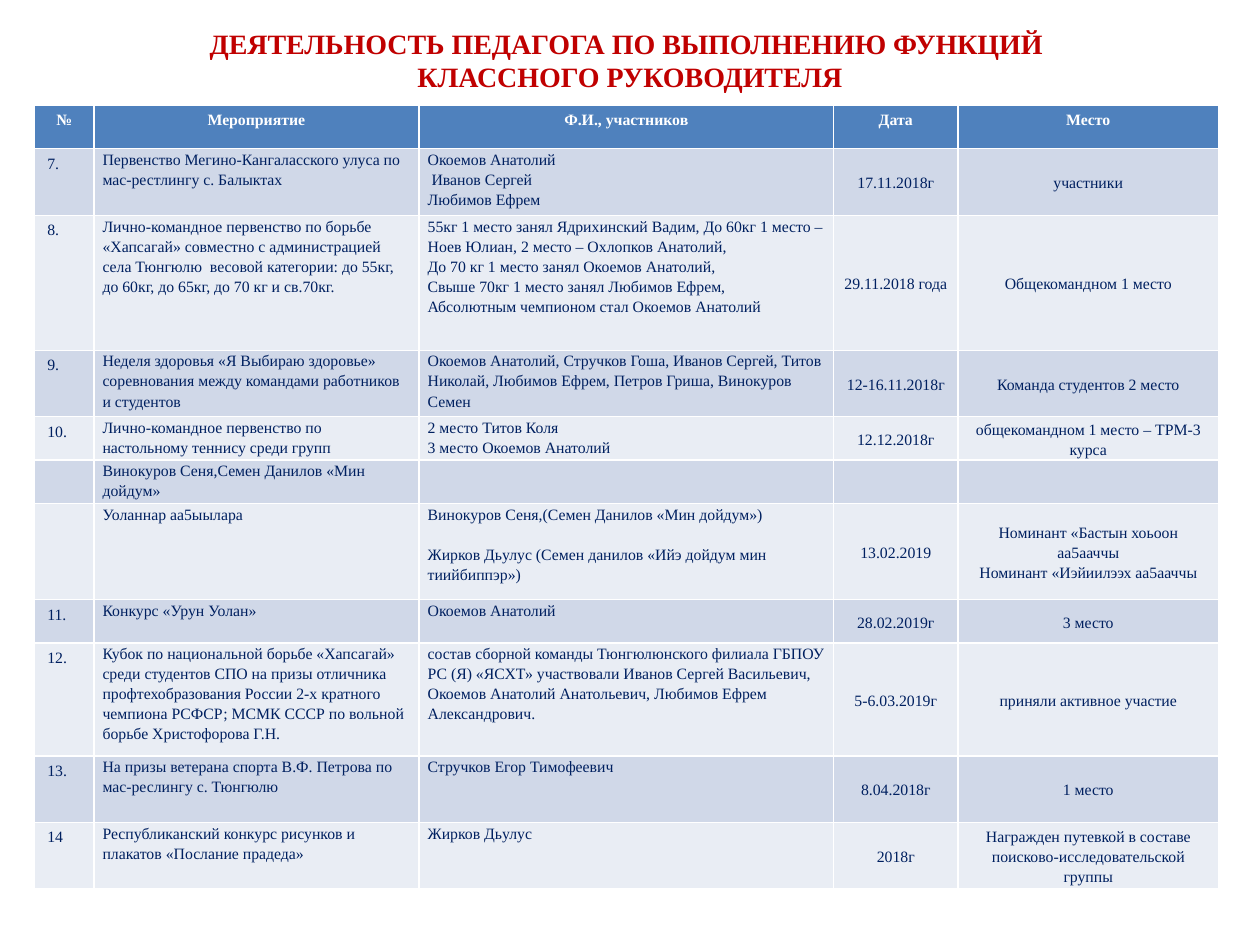
from dataclasses import dataclass

from pptx import Presentation
from pptx.dml.color import RGBColor
from pptx.enum.text import MSO_ANCHOR, PP_ALIGN
from pptx.util import Pt

COLORS = {
    "title": "C00000",
    "header": "4F81BD",
    "header_text": "FFFFFF",
    "odd_row": "D0D8E8",
    "even_row": "E9EDF4",
    "text": "002060",
}
TITLE_FONT = {"name": "Times New Roman", "size": Pt(16), "bold": True}
HEADER_FONT = {"name": "Times New Roman", "size": Pt(9), "bold": True}
BODY_FONT = {"name": "Times New Roman", "size": Pt(9), "bold": False}
TIGHT_MARGINS = {
    "margin_left": Pt(5), "margin_top": Pt(0),
    "margin_right": Pt(5), "margin_bottom": Pt(0),
}


@dataclass
class Line:
    text: str
    before: float = 0
    indent: float = 0


@dataclass
class Column:
    heading: str
    width: float
    align: PP_ALIGN = PP_ALIGN.LEFT
    anchor: MSO_ANCHOR = MSO_ANCHOR.TOP
    tight: bool = True


@dataclass
class Event:
    height: float
    number: str
    activity: str
    participants: list[Line]
    date: str
    places: list[Line]

    def cells(self) -> list[list[Line]]:
        return [[Line(self.number)], [Line(self.activity)], self.participants,
                [Line(self.date)], self.places]


CENTERED = {"align": PP_ALIGN.CENTER, "anchor": MSO_ANCHOR.MIDDLE}
COLUMNS = [
    Column("№", 33.8, tight=False),
    Column("Мероприятие", 185.8),
    Column("Ф.И., участников", 236.9),
    Column("Дата", 71.2, **CENTERED),
    Column("Место", 148.8, **CENTERED),
]
HEADER_HEIGHT = 24.8

EVENTS = [
    Event(38.2, "7.", "Первенство Мегино-Кангаласского улуса по мас-рестлингу с. Балыктах",
          [Line("Окоемов Анатолий"), Line("Иванов Сергей", indent=2.25), Line("Любимов Ефрем")],
          "17.11.2018г", [Line("участники")]),
    Event(77, "8.", "Лично-командное первенство по борьбе «Хапсагай» совместно с администрацией "
          "села Тюнгюлю  весовой категории: до 55кг, до 60кг, до 65кг, до 70 кг и св.70кг.",
          [Line("55кг 1 место занял Ядрихинский Вадим, До 60кг 1 место – "
                "Ноев Юлиан, 2 место – Охлопков Анатолий,"),
           Line("До 70 кг 1 место занял Окоемов Анатолий,"),
           Line("Свыше 70кг 1 место занял Любимов Ефрем,"),
           Line("Абсолютным чемпионом стал Окоемов Анатолий")],
          "29.11.2018 года", [Line("Общекомандном 1 место")]),
    Event(38, "9.", "Неделя здоровья «Я Выбираю здоровье» соревнования между командами "
          "работников и студентов",
          [Line("Окоемов Анатолий, Стручков Гоша, Иванов Сергей, Титов Николай, "
                "Любимов Ефрем, Петров Гриша, Винокуров Семен")],
          "12-16.11.2018г", [Line("Команда студентов 2 место")]),
    Event(24.8, "10.", "Лично-командное первенство по настольному теннису среди групп",
          [Line("2 место Титов Коля"), Line("3 место Окоемов Анатолий")],
          "12.12.2018г", [Line("общекомандном 1 место – ТРМ-3 курса")]),
    Event(24.8, "", "Винокуров Сеня,Семен Данилов «Мин дойдум»", [Line("")], "", [Line("")]),
    Event(55, "", "Уоланнар аа5ыылара",
          [Line("Винокуров Сеня,(Семен Данилов «Мин дойдум»)"),
           Line("Жирков Дьулус (Семен данилов «Ийэ дойдум мин тиийбиппэр»)", before=11.5)],
          "13.02.2019",
          [Line("Номинант «Бастын хоьоон аа5ааччы"), Line("Номинант «Иэйиилээх аа5ааччы")]),
    Event(24.8, "11.", "Конкурс «Урун Уолан»", [Line("Окоемов Анатолий")],
          "28.02.2019г", [Line("3 место")]),
    Event(64.5, "12.", "Кубок по национальной борьбе «Хапсагай» среди студентов СПО на призы "
          "отличника профтехобразования России 2-х кратного чемпиона РСФСР; "
          "МСМК СССР по вольной борьбе Христофорова Г.Н.",
          [Line("состав сборной команды Тюнгюлюнского филиала ГБПОУ РС (Я) «ЯСХТ» "
                "участвовали Иванов Сергей Васильевич, Окоемов Анатолий Анатольевич, "
                "Любимов Ефрем Александрович.")],
          "5-6.03.2019г", [Line("приняли активное участие")]),
    Event(38, "13.", "На призы ветерана спорта В.Ф. Петрова по мас-реслингу с. Тюнгюлю",
          [Line("Стручков Егор Тимофеевич")], "8.04.2018г", [Line("1 место")]),
    Event(38, "14", "Республиканский конкурс рисунков и плакатов «Послание прадеда»",
          [Line("Жирков Дьулус")], "2018г",
          [Line("Награжден путевкой в составе поисково-исследовательской группы")]),
]


def apply(target, formats: dict) -> None:
    for attribute, value in formats.items():
        setattr(target, attribute, value)


def style_font(font, formats: dict, color: str) -> None:
    apply(font, formats)
    font.color.rgb = RGBColor.from_string(COLORS[color])


def fill_cell(cell, lines: list[Line], fill: str, formats: dict, color: str,
              align: PP_ALIGN, spacing: float) -> None:
    cell.fill.solid()
    cell.fill.fore_color.rgb = RGBColor.from_string(COLORS[fill])
    for index, line in enumerate(lines):
        frame = cell.text_frame
        paragraph = frame.add_paragraph() if index else frame.paragraphs[0]
        apply(paragraph, {"alignment": align, "line_spacing": spacing})
        if line.before:
            paragraph.space_before = Pt(line.before)
        if line.indent:
            paragraph._p.get_or_add_pPr().set("marL", str(Pt(line.indent)))
        if line.text:
            run = paragraph.add_run()
            run.text = line.text
            style_font(run.font, formats, color)
        else:
            # Keeps empty cells from stretching their row
            paragraph._p.get_or_add_endParaRPr().set("sz", "900")


def draw_title(slide) -> None:
    title = slide.shapes.title
    apply(title, {"left": Pt(36), "top": Pt(-2), "width": Pt(648), "height": Pt(72.5)})
    title.text_frame.vertical_anchor = MSO_ANCHOR.MIDDLE
    title.text_frame.text = ("ДЕЯТЕЛЬНОСТЬ ПЕДАГОГА ПО ВЫПОЛНЕНИЮ ФУНКЦИЙ \v"
                             "КЛАССНОГО РУКОВОДИТЕЛЯ")
    paragraph = title.text_frame.paragraphs[0]
    paragraph.alignment = PP_ALIGN.CENTER
    for run in paragraph.runs:
        style_font(run.font, TITLE_FONT, "title")


def draw_events(slide) -> None:
    heights = [HEADER_HEIGHT] + [event.height for event in EVENTS]
    widths = [column.width for column in COLUMNS]
    table = slide.shapes.add_table(len(heights), len(widths), Pt(19.8), Pt(60.2),
                                   Pt(sum(widths)), Pt(sum(heights))).table
    for row, height in zip(table.rows, heights):
        row.height = Pt(height)
    for c, column in enumerate(COLUMNS):
        table.columns[c].width = Pt(column.width)
        fill_cell(table.cell(0, c), [Line(column.heading)], "header", HEADER_FONT,
                  "header_text", PP_ALIGN.CENTER, 1.0)
    # Banded rows of events
    for r, event in enumerate(EVENTS, start=1):
        band = "odd_row" if r % 2 else "even_row"
        for c, (column, lines) in enumerate(zip(COLUMNS, event.cells())):
            cell = table.cell(r, c)
            if column.tight:
                apply(cell, TIGHT_MARGINS)
            cell.vertical_anchor = column.anchor
            fill_cell(cell, lines, band, BODY_FONT, "text", column.align,
                      1.15 if column.tight else 1.0)


def main() -> None:
    presentation = Presentation()
    apply(presentation, {"slide_width": Pt(720), "slide_height": Pt(540)})
    slide = presentation.slides.add_slide(presentation.slide_layouts[5])
    draw_events(slide)
    draw_title(slide)
    presentation.save("out.pptx")


if __name__ == "__main__":
    main()
